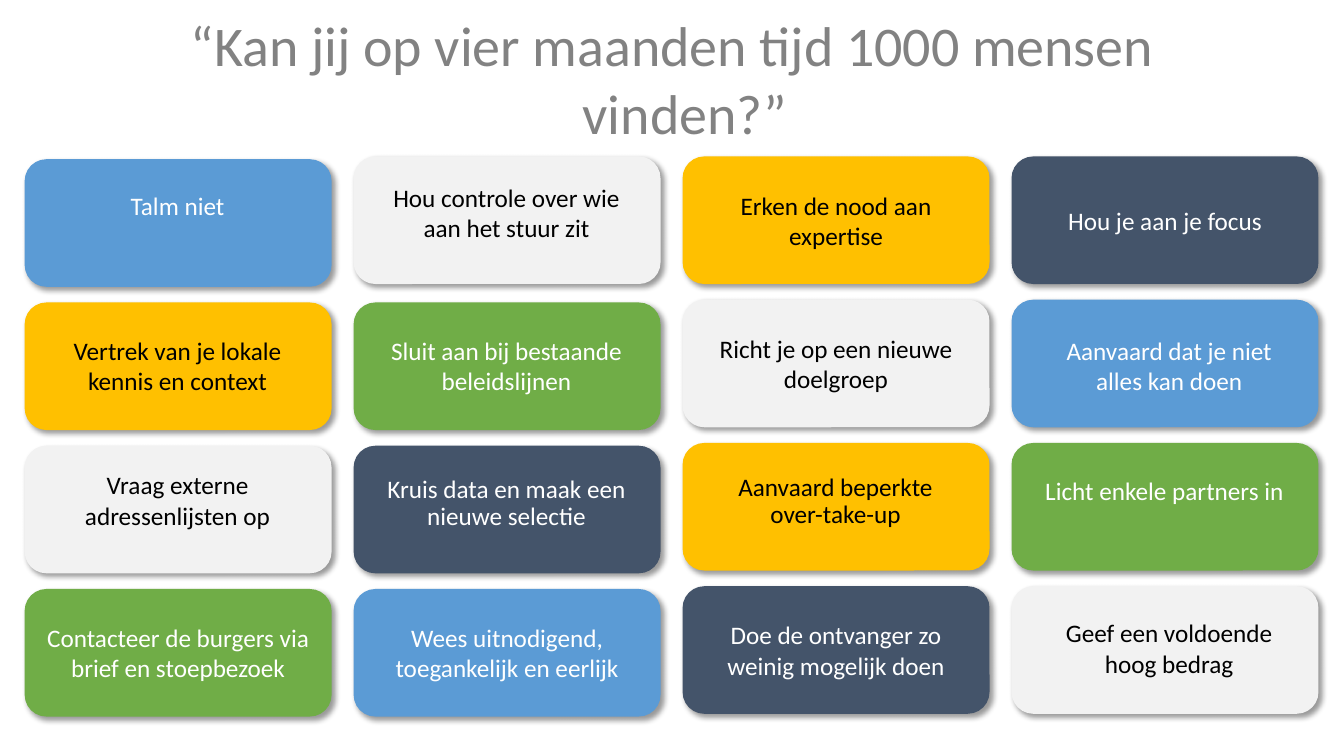
"""Build a slide with sixteen coloured advice cards under a question."""
import pptx
import pptx.util
import pptx.dml.color
import pptx.enum.shapes
import pptx.enum.text
import pptx.oxml
import pptx.oxml.ns

Cm = pptx.util.Cm
COLORS = {
    "blue": "5B9BD5", "grey": "F2F2F2", "gold": "FFC000", "navy": "44546A",
    "green": "70AD47", "title": "828282", "black": "000000", "white": "FFFFFF",
}
CARD_SHADOW = (
    f'<a:effectLst {pptx.oxml.ns.nsdecls("a")}>'
    '<a:outerShdw blurRad="50800" dist="38100" dir="2700000" algn="tl" rotWithShape="0">'
    f'<a:srgbClr val="{COLORS["black"]}"><a:alpha val="40000"/></a:srgbClr>'
    '</a:outerShdw></a:effectLst>'
)


def rgb(name):
    return pptx.dml.color.RGBColor.from_string(COLORS[name])


def write(frame, wording, size, color):
    frame.word_wrap = True
    frame.text = wording
    paragraph = frame.paragraphs[0]
    paragraph.alignment = pptx.enum.text.PP_ALIGN.CENTER
    font = paragraph.runs[0].font
    font.name = "Calibri"
    font.size = pptx.util.Pt(size)
    font.color.rgb = rgb(color)
    return paragraph


presentation = pptx.Presentation()
presentation.slide_width = Cm(33.87)
presentation.slide_height = Cm(19.05)
slide = presentation.slides.add_slide(presentation.slide_layouts[5])

question = slide.shapes.title
question.left, question.top = Cm(2.03), Cm(0.15)
question.width, question.height = Cm(29.82), Cm(3.68)
question.text_frame.vertical_anchor = pptx.enum.text.MSO_ANCHOR.TOP
question.text_frame.auto_size = pptx.enum.text.MSO_AUTO_SIZE.SHAPE_TO_FIT_TEXT
question_line = write(
    question.text_frame, "“Kan jij op vier maanden tijd 1000 mensen vinden?”", 40, "title")
question_indent = question_line._p.get_or_add_pPr()
question_indent.set("marL", str(Cm(0.64)))
question_indent.set("indent", str(-Cm(0.64)))

# Each advice: wording, card colour, caption top in cm (None: written in the card), tight spacing
advice_rows = [
    [("Talm niet", "blue", 4.67, False),
     ("Hou controle over wie aan het stuur zit", "grey", 4.47, False),
     ("Erken de nood aan expertise", "gold", None, False),
     ("Hou je aan je focus", "navy", None, False)],
    [("Vertrek van je lokale kennis en context", "gold", 8.33, False),
     ("Sluit aan bij bestaande beleidslijnen", "green", 8.33, False),
     ("Richt je op een nieuwe doelgroep", "grey", None, False),
     ("Aanvaard dat je niet alles kan doen", "blue", 8.33, False)],
    [("Vraag externe adressenlijsten op", "grey", 11.71, False),
     ("Kruis data en maak een nieuwe selectie", "navy", 11.89, True),
     ("Aanvaard beperkte over-take-up", "gold", 11.84, True),
     ("Licht enkele partners in", "green", 11.94, True)],
    [("Contacteer de burgers via brief en stoepbezoek", "green", None, False),
     ("Wees uitnodigend, toegankelijk en eerlijk", "blue", None, False),
     ("Doe de ontvanger zo weinig mogelijk doen", "navy", None, False),
     ("Geef een voldoende hoog bedrag", "grey", 15.44, False)],
]

for row, advices in enumerate(advice_rows):
    for column, (wording, color, caption_top, tight) in enumerate(advices):
        left = 0.64 + 8.29 * column
        lowered = column == 0 or (column == 1 and row > 0)
        top = 3.96 + 3.61 * row + (0.07 if lowered else 0)
        card = slide.shapes.add_shape(
            pptx.enum.shapes.MSO_SHAPE.ROUNDED_RECTANGLE,
            Cm(left), Cm(top), Cm(7.7), Cm(3.18))
        card.fill.solid()
        card.fill.fore_color.rgb = rgb(color)
        card.line.color.rgb = rgb(color)
        card.line.width = pptx.util.Pt(1)
        card._element.spPr.append(pptx.oxml.parse_xml(CARD_SHADOW))

        caption = card
        if caption_top is not None:
            inset = 0.6 if column == 3 and not tight else 0.48
            caption = slide.shapes.add_textbox(
                Cm(left + inset), Cm(caption_top), Cm(6.71), Cm(1.85))
        text_color = "black" if color in ("grey", "gold") else "white"
        line = write(caption.text_frame, wording, 18, text_color)
        if tight:
            line.line_spacing = 0.9
            line.space_before = pptx.util.Pt(10)

presentation.save("out.pptx")
